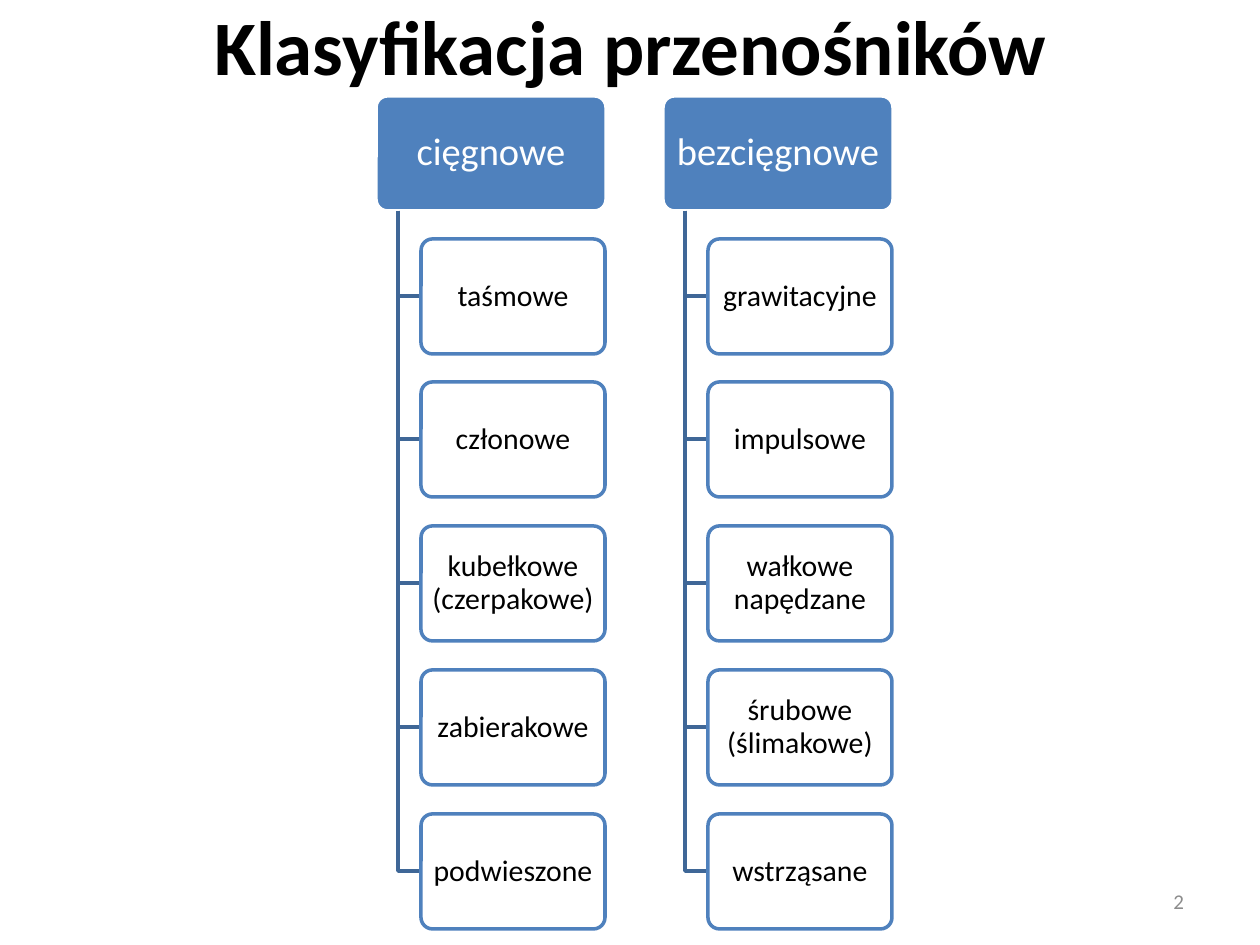
from dataclasses import dataclass
from typing import Any

from lxml.etree import SubElement
from pptx import Presentation
from pptx.dml.color import RGBColor
from pptx.enum.shapes import MSO_SHAPE as Preset
from pptx.enum.text import MSO_ANCHOR as Anchor, PP_ALIGN as Align
from pptx.oxml.ns import qn
from pptx.util import Emu, Pt

SCALE = 914400 / 126


@dataclass(frozen=True)
class Theme:
    font: str = "Calibri"
    ink: str = "000000"
    paper: str = "FFFFFF"
    accent: str = "4F81BD"
    branch: str = "3F6797"
    muted: str = "8C8C8C"
    title_size: int = 44
    head_size: int = 22
    leaf_size: int = 17
    number_size: int = 12
    line_width: int = 2
    leaf_opacity: int = 90


@dataclass(frozen=True)
class Area:
    left: int
    top: int
    width: int
    height: int


@dataclass(frozen=True)
class Label:
    size: int
    color: str
    align: Align = Align.CENTER
    bold: bool = False
    spacing: float = 1.0
    inset_x: int = 13
    inset_y: int = 6


@dataclass(frozen=True)
class Branch:
    left: int
    head: str
    leaves: tuple[str, ...]


THEME = Theme()
TITLE = Label(THEME.title_size, THEME.ink, bold=True)
HEAD = Label(THEME.head_size, THEME.paper, spacing=0.9, inset_x=6, inset_y=4)
LEAF = Label(THEME.leaf_size, THEME.ink, spacing=0.9, inset_x=5, inset_y=3)
NUMBER = Label(THEME.number_size, THEME.muted, align=Align.RIGHT)

HEAD_TOP, HEAD_WIDTH, BOX_HEIGHT = 96, 230, 115
LEAF_TOP, LEAF_WIDTH, LEAF_INDENT = 239, 184, 45
LEAF_PITCH = BOX_HEIGHT * 5 / 4
TRUNK_INDENT = 22

BRANCHES = (
    Branch(376, "cięgnowe", (
        "taśmowe", "członowe", "kubełkowe (czerpakowe)", "zabierakowe", "podwieszone")),
    Branch(663, "bezcięgnowe", (
        "grawitacyjne", "impulsowe", "wałkowe napędzane", "śrubowe (ślimakowe)", "wstrząsane")),
)


def px(length: int) -> Emu:
    return Emu(round(length * SCALE))


def place(area: Area) -> tuple[Emu, ...]:
    return tuple(map(px, (area.left, area.top, area.width, area.height)))


def assign(target: Any, values: dict[str, Any]) -> None:
    for name, value in values.items():
        setattr(target, name, value)


def write(box: Any, text: str, label: Label) -> None:
    frame = box.text_frame
    assign(frame, {
        "word_wrap": True, "vertical_anchor": Anchor.MIDDLE,
        "margin_left": px(label.inset_x), "margin_right": px(label.inset_x),
        "margin_top": px(label.inset_y), "margin_bottom": px(label.inset_y),
    })
    para = frame.paragraphs[0]
    assign(para, {"alignment": label.align, "line_spacing": label.spacing})
    span = para.add_run()
    span.text = text
    assign(span.font, {"name": THEME.font, "size": Pt(label.size), "bold": label.bold})
    span.font.color.rgb = RGBColor.from_string(label.color)


def draw_text(page: Any, area: Area, text: str, label: Label) -> None:
    write(page.shapes.add_textbox(*place(area)), text, label)


def outline(shape: Any, color: str) -> None:
    shape.shadow.inherit = False
    shape.line.color.rgb = RGBColor.from_string(color)
    shape.line.width = Pt(THEME.line_width)


def draw_box(page: Any, area: Area, text: str, label: Label,
             fill: str, line: str, opacity: int = 100) -> None:
    box = page.shapes.add_shape(Preset.ROUNDED_RECTANGLE, *place(area))
    box.adjustments[0] = 0.1
    box.fill.solid()
    box.fill.fore_color.rgb = RGBColor.from_string(fill)
    if opacity < 100:
        color = box.fill._xPr.find(qn("a:solidFill"))[0]
        SubElement(color, qn("a:alpha"), val=str(opacity * 1000))
    outline(box, line)
    write(box, text, label)


def draw_elbow(page: Any, left: int, top: int, right: int, bottom: int) -> None:
    builder = page.shapes.build_freeform(left, top, scale=SCALE)
    builder.add_line_segments([(left, bottom), (right, bottom)], close=False)
    elbow = builder.convert_to_shape()
    elbow.fill.background()
    outline(elbow, THEME.branch)


def draw_branch(page: Any, branch: Branch) -> None:
    draw_box(page, Area(branch.left, HEAD_TOP, HEAD_WIDTH, BOX_HEIGHT),
             branch.head, HEAD, THEME.accent, THEME.paper)
    leaf_left = branch.left + LEAF_INDENT
    for index, text in enumerate(branch.leaves):
        top = int(LEAF_TOP + index * LEAF_PITCH)
        draw_elbow(page, branch.left + TRUNK_INDENT, HEAD_TOP + BOX_HEIGHT,
                   leaf_left, top + BOX_HEIGHT // 2)
        draw_box(page, Area(leaf_left, top, LEAF_WIDTH, BOX_HEIGHT),
                 text, LEAF, THEME.paper, THEME.accent, THEME.leaf_opacity)


def main() -> None:
    deck = Presentation()
    assign(deck, {"slide_width": px(1260), "slide_height": px(945)})
    page = deck.slides.add_slide(deck.slide_layouts[6])
    draw_text(page, Area(64, -34, 1134, 158), "Klasyfikacja przenośników", TITLE)
    for branch in BRANCHES:
        draw_branch(page, branch)
    draw_text(page, Area(903, 876, 294, 50), "2", NUMBER)
    deck.save("out.pptx")


if __name__ == "__main__":
    main()
